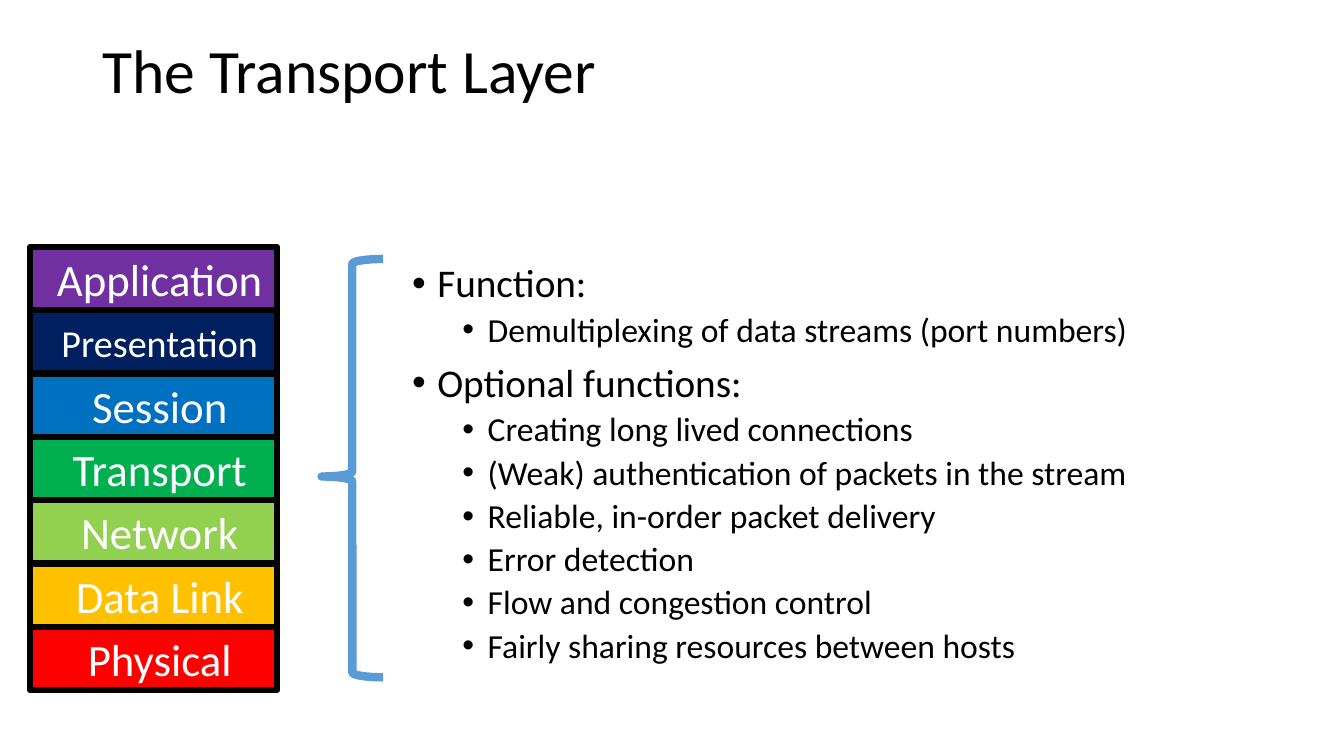
"""Build the slide on the transport layer of the OSI stack."""
from typing import Any, NamedTuple

from lxml.etree import SubElement
from pptx import Presentation
from pptx.dml.color import RGBColor
from pptx.enum.shapes import MSO_SHAPE
from pptx.enum.text import MSO_ANCHOR, PP_ALIGN
from pptx.oxml.ns import qn
from pptx.util import Pt

COLORS = {
    "text": "000000", "label": "FFFFFF", "edge": "000000", "brace": "5B9BD5",
    "purple": "7030A0", "navy": "002060", "blue": "0070C0", "green": "00B050",
    "lime": "92D050", "amber": "FFC000", "red": "FF0000",
}
STACK_LEFT, STACK_TOP, STACK_WIDTH, LAYER_HEIGHT = 21.6, 176.4, 176.4, 45.24
BODY_TOP, BODY_HEIGHT = 185, 298.8


class Layer(NamedTuple):
    name: str
    color: str
    size: float = 32


class Level(NamedTuple):
    size: float
    indent: float
    before: float


class Point(NamedTuple):
    text: str
    level: Level


HEAD = Level(28, 18, 10)
SUB = Level(24, 54, 5)
LAYERS = [
    Layer("Application", "purple"),
    Layer("Presentation", "navy", 27.2),
    Layer("Session", "blue"),
    Layer("Transport", "green"),
    Layer("Network", "lime"),
    Layer("Data Link", "amber"),
    Layer("Physical", "red"),
]
POINTS = [
    Point("Function:", HEAD),
    Point("Demultiplexing of data streams (port numbers)", SUB),
    Point("Optional functions:", HEAD),
    Point("Creating long lived connections", SUB),
    Point("(Weak) authentication of packets in the stream", SUB),
    Point("Reliable, in-order packet delivery", SUB),
    Point("Error detection", SUB),
    Point("Flow and congestion control", SUB),
    Point("Fairly sharing resources between hosts", SUB),
]


def rgb(name: str) -> RGBColor:
    return RGBColor.from_string(COLORS[name])


def apply(target: Any, values: dict[str, Any]) -> None:
    for name, value in values.items():
        setattr(target, name, value)


def write(p: Any, text: str, size: float, color: str, **formats: Any) -> None:
    apply(p, formats)
    r = p.add_run()
    r.text = text
    apply(r.font, {"name": "Calibri", "size": Pt(size)})
    r.font.color.rgb = rgb(color)


def set_indent(p: Any, left: float, first: float = 0) -> None:
    pPr = p._p.get_or_add_pPr()
    pPr.set("marL", str(Pt(left)))
    pPr.set("indent", str(Pt(first)))


def add_bullet(p: Any) -> None:
    pPr = p._p.get_or_add_pPr()
    SubElement(pPr, qn("a:buFont"), typeface="Arial")
    SubElement(pPr, qn("a:buChar"), char="•")


def add_text_box(s: Any, left: float, top: float, width: float, height: float,
                 anchor: MSO_ANCHOR) -> Any:
    tf = s.shapes.add_textbox(Pt(left), Pt(top), Pt(width), Pt(height)).text_frame
    apply(tf, {"word_wrap": True, "vertical_anchor": anchor})
    return tf


def add_title(s: Any, text: str) -> None:
    tf = add_text_box(s, 66, 0, 828, 104.4, MSO_ANCHOR.MIDDLE)
    write(tf.paragraphs[0], text, 44, "text", line_spacing=0.9)


def add_points(s: Any, points: list[Point]) -> None:
    tf = add_text_box(s, 287.3, BODY_TOP, 561.6, BODY_HEIGHT, MSO_ANCHOR.TOP)
    for i, (text, level) in enumerate(points):
        p = tf.add_paragraph() if i else tf.paragraphs[0]
        write(p, text, level.size, "text", line_spacing=0.9,
              space_before=Pt(level.before), level=int(level is SUB))
        set_indent(p, level.indent, -18)
        add_bullet(p)


def add_layer(s: Any, layer: Layer, row: int) -> None:
    sp = s.shapes.add_shape(
        MSO_SHAPE.RECTANGLE, Pt(STACK_LEFT), Pt(STACK_TOP + row * LAYER_HEIGHT),
        Pt(STACK_WIDTH), Pt(LAYER_HEIGHT))
    sp.shadow.inherit = False
    sp.fill.solid()
    sp.fill.fore_color.rgb = rgb(layer.color)
    sp.line.color.rgb = rgb("edge")
    sp.line.width = Pt(4.5)
    tf = sp.text_frame
    apply(tf, {"word_wrap": True, "vertical_anchor": MSO_ANCHOR.MIDDLE})
    p = tf.paragraphs[0]
    write(p, layer.name, layer.size, "label", alignment=PP_ALIGN.CENTER,
          space_before=Pt(0.2 * layer.size))
    set_indent(p, 8.64)


def add_brace(s: Any) -> None:
    sp = s.shapes.add_shape(MSO_SHAPE.LEFT_BRACE, Pt(229.7), Pt(BODY_TOP),
                            Pt(43.9), Pt(BODY_HEIGHT))
    sp.shadow.inherit = False
    sp.adjustments[0] = 0.08
    sp.adjustments[1] = 0.52
    sp.fill.background()
    sp.line.color.rgb = rgb("brace")
    sp.line.width = Pt(6)


def main() -> None:
    prs = Presentation()
    apply(prs, {"slide_width": Pt(960), "slide_height": Pt(540)})
    s = prs.slides.add_slide(prs.slide_layouts[6])
    add_title(s, "The Transport Layer")
    add_points(s, POINTS)
    for row, layer in enumerate(LAYERS):
        add_layer(s, layer, row)
    add_brace(s)
    prs.save("out.pptx")


if __name__ == "__main__":
    main()
